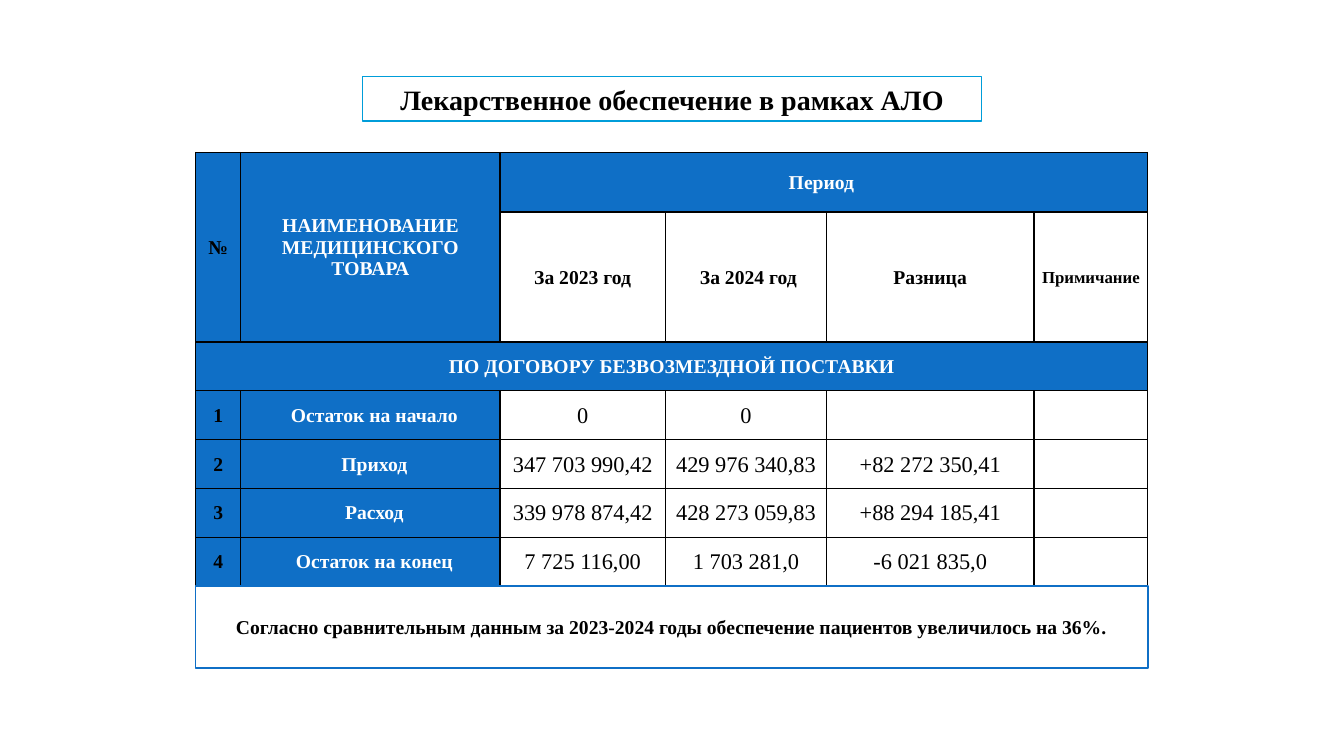
from lxml.etree import SubElement
from pptx import Presentation
from pptx.dml.color import RGBColor
from pptx.enum.shapes import MSO_SHAPE as Shape
from pptx.enum.text import MSO_ANCHOR as Anchor, PP_ALIGN as Align
from pptx.oxml.ns import qn
from pptx.util import Cm, Pt

BLACK = RGBColor(0x00, 0x00, 0x00)
WHITE = RGBColor(0xFF, 0xFF, 0xFF)
BLUE = RGBColor(0x0F, 0x6F, 0xC6)
CYAN = RGBColor(0x00, 0x9D, 0xD9)

COLUMNS = [1.14, 6.53, 4.17, 4.06, 5.23, 2.87]
ROWS = [1.5, 3.28] + [1.23] * 5
SUBHEADS = [("За 2023 год", 14), (" За 2024 год", 14), ("Разница", 14), ("Примичание", 12)]
STOCK = [
    ("Остаток на начало", "0", "0", ""),
    ("Приход", "347 703 990,42", "429 976 340,83", "+82 272 350,41"),
    ("Расход", "339 978 874,42", "428 273 059,83", "+88 294 185,41"),
    ("Остаток на конец", "7 725 116,00", "1 703 281,0", "-6 021 835,0"),
]


class SlideBuilder:
    """Draws styled boxes and tables on one slide."""

    def __init__(self, prs, font="Times New Roman"):
        self.s = prs.slides.add_slide(prs.slide_layouts[6])
        self.font = font

    def text(self, tf, text, size, color=BLACK, bold=True):
        tf.text = text
        p = tf.paragraphs[0]
        p.alignment = Align.CENTER
        for r in p.runs:
            r.font.name, r.font.size, r.font.bold = self.font, Pt(size), bold
            r.font.color.rgb = color
        return p

    def box(self, left, top, width, height, text, size, line):
        sp = self.s.shapes.add_shape(Shape.RECTANGLE, Cm(left), Cm(top), Cm(width), Cm(height))
        sp.shadow.inherit = False
        sp.fill.solid()
        sp.fill.fore_color.rgb = WHITE
        sp.line.color.rgb = line
        sp.line.width = Pt(1)
        tf = sp.text_frame
        tf.word_wrap = True
        tf.vertical_anchor = Anchor.MIDDLE
        self.text(tf, text, size)

    def table(self, left, top, widths, heights):
        frame = self.s.shapes.add_table(len(heights), len(widths), Cm(left), Cm(top),
                                        Cm(sum(widths)), Cm(sum(heights)))
        table = frame.table
        table.first_row = table.horz_banding = False
        for column, width in zip(table.columns, widths):
            column.width = Cm(width)
        for row, height in zip(table.rows, heights):
            row.height = Cm(height)
        for cell in table.iter_cells():
            cell.margin_left = cell.margin_right = cell.margin_top = Cm(0.02)
            cell.margin_bottom = 0
            cell.vertical_anchor = Anchor.MIDDLE
            self.border(cell)
            cell.fill.background()
        return table

    def border(self, cell):
        for side in ("a:lnL", "a:lnR", "a:lnT", "a:lnB"):
            ln = SubElement(cell._tc.get_or_add_tcPr(), qn(side), w=str(Pt(1)))
            fill = SubElement(ln, qn("a:solidFill"))
            SubElement(fill, qn("a:srgbClr"), val=str(BLACK))

    def cell(self, cell, text, size=14, color=BLACK, bold=True, fill=None, indent=0):
        p = self.text(cell.text_frame, text, size, color, bold)
        if indent:
            p._p.get_or_add_pPr().set("marL", str(Cm(indent)))
        if fill is not None:
            cell.fill.solid()
            cell.fill.fore_color.rgb = fill


def main():
    prs = Presentation()
    prs.slide_width, prs.slide_height = Cm(33.87), Cm(19.05)
    slide = SlideBuilder(prs)
    slide.box(9.14, 1.93, 15.6, 1.12, "Лекарственное обеспечение в рамках АЛО", 20, CYAN)

    table = slide.table(4.93, 3.84, COLUMNS, ROWS)
    for first, last in [((0, 0), (1, 0)), ((0, 1), (1, 1)), ((0, 2), (0, 5)), ((2, 0), (2, 5))]:
        table.cell(*first).merge(table.cell(*last))
    slide.cell(table.cell(0, 0), "№", fill=BLUE)
    slide.cell(table.cell(0, 1), "НАИМЕНОВАНИЕ МЕДИЦИНСКОГО ТОВАРА", color=WHITE, fill=BLUE)
    slide.cell(table.cell(0, 2), "Период ", color=WHITE, fill=BLUE)
    slide.cell(table.cell(2, 0), "ПО ДОГОВОРУ БЕЗВОЗМЕЗДНОЙ ПОСТАВКИ", color=WHITE, fill=BLUE)
    for col, (text, size) in enumerate(SUBHEADS, 2):
        slide.cell(table.cell(1, col), text, size)
    for number, (name, *values) in enumerate(STOCK, 1):
        row = number + 2
        slide.cell(table.cell(row, 0), str(number), fill=BLUE)
        slide.cell(table.cell(row, 1), name, color=WHITE, fill=BLUE, indent=0.2)
        for col, value in enumerate(values, 2):
            slide.cell(table.cell(row, col), value, 16, bold=False)

    slide.box(4.93, 14.77, 24, 2.06, "Согласно сравнительным данным за 2023-2024 годы "
              "обеспечение пациентов увеличилось на 36%.", 14, BLUE)
    prs.save("out.pptx")


if __name__ == "__main__":
    main()
